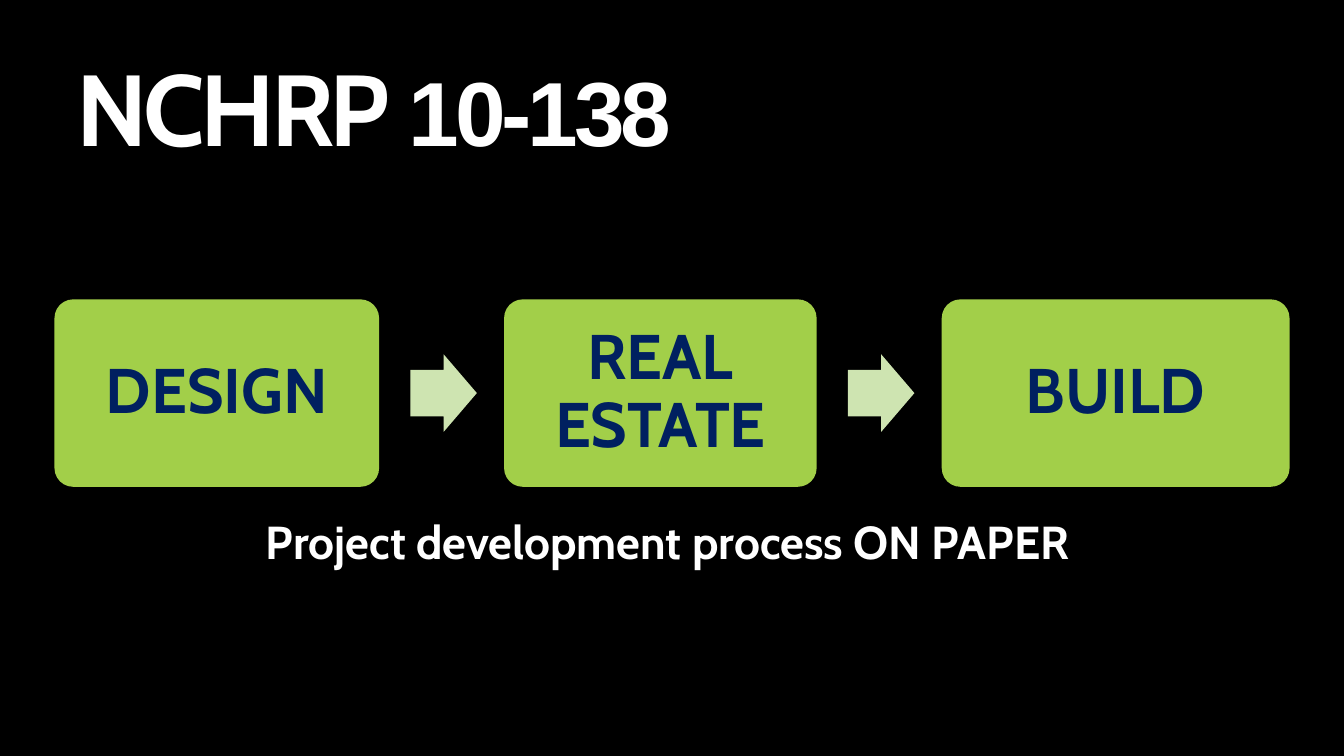
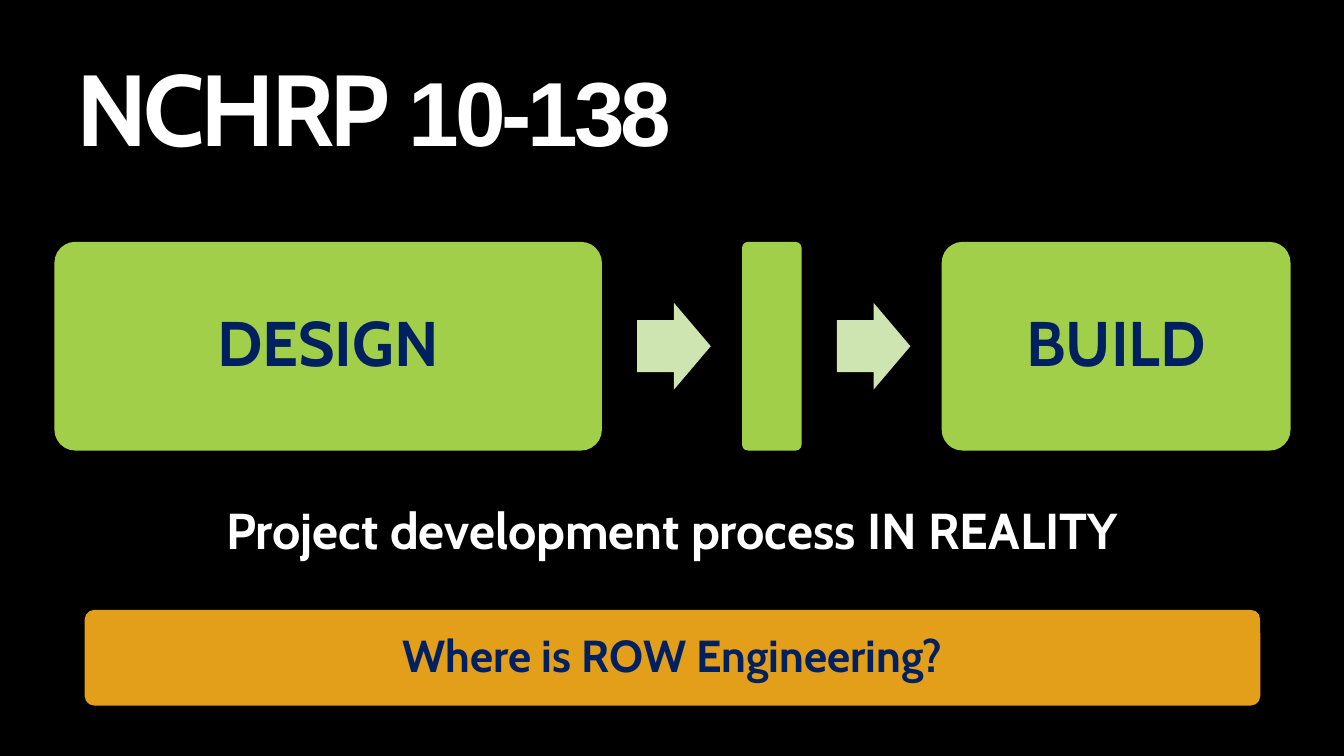
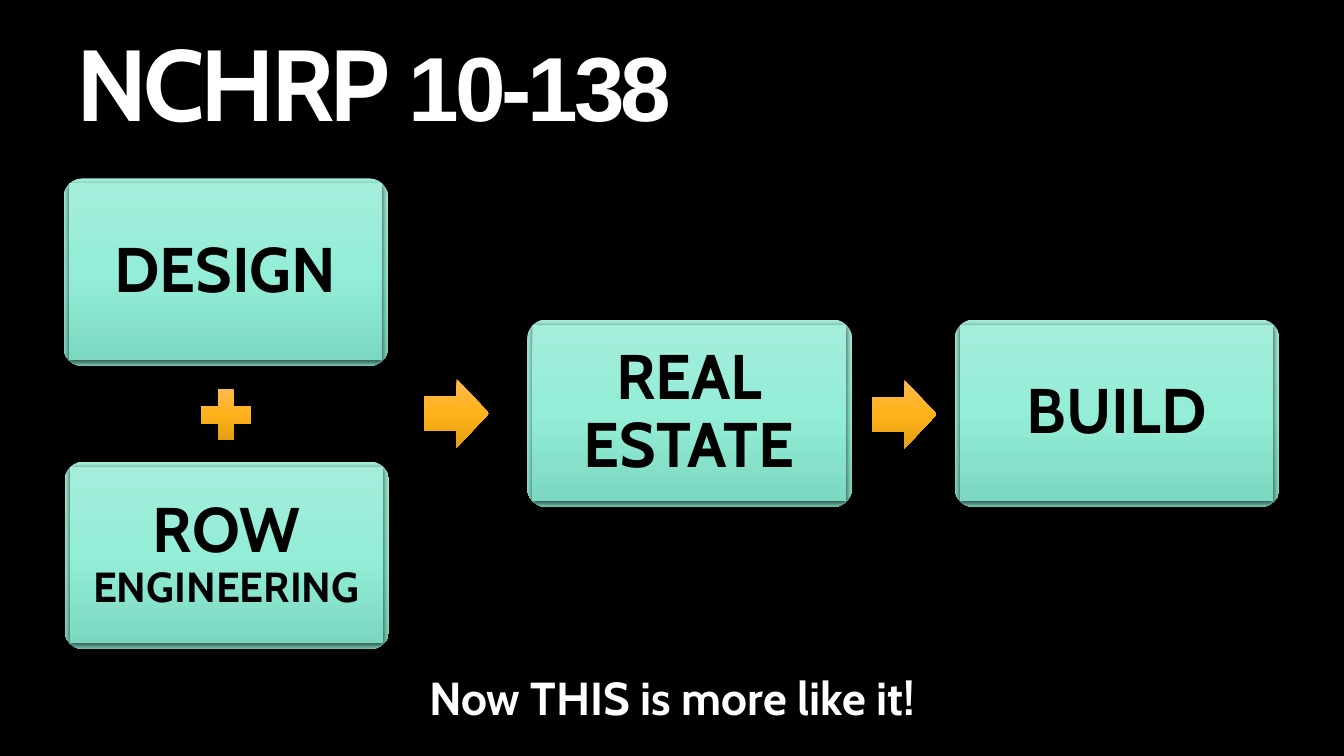
"""Three slides on the NCHRP 10-138 project development process."""
from pptx import Presentation
from pptx.dml.color import RGBColor
from pptx.enum.shapes import MSO_SHAPE
from pptx.enum.text import MSO_ANCHOR, PP_ALIGN
from pptx.oxml import parse_xml
from pptx.oxml.ns import nsdecls
from pptx.util import Inches, Pt

ROUNDED, RECT = MSO_SHAPE.ROUNDED_RECTANGLE, MSO_SHAPE.RECTANGLE
ARROW, PLUS = MSO_SHAPE.RIGHT_ARROW, MSO_SHAPE.CROSS
LEFT, CENTER = PP_ALIGN.LEFT, PP_ALIGN.CENTER
TOP, MIDDLE = MSO_ANCHOR.TOP, MSO_ANCHOR.MIDDLE

COLORS = {
    "black": "000000", "white": "FFFFFF", "navy": "002060",
    "green": "A2CF49", "pale_green": "CEE4B1", "amber": "FCB11C",
}
MINT = {"stops": ("A4EDDB", "93EDD7", "7DD8C2"), "alpha": 63, "blur": 4.5, "dist": 1.5}
ORANGE = {"stops": ("FFBA4F", "FFB219", "E59F14"), "alpha": 32, "blur": 3.5, "dist": 2.2}


def write(shape, runs, color, align=CENTER, inset=None, anchor=MIDDLE):
    """Fill the shape with one paragraph of (text, size, font) runs."""
    frame = shape.text_frame
    frame.word_wrap = True
    frame.vertical_anchor = anchor
    if inset is not None:
        frame.margin_left = frame.margin_right = Inches(inset)
        frame.margin_top = frame.margin_bottom = Inches(inset)
    paragraph = frame.paragraphs[0]
    paragraph.alignment = align
    paragraph.line_spacing = 0.9
    paragraph.font.bold = True
    paragraph.font.color.rgb = RGBColor.from_string(COLORS[color])
    for text, size, font in runs:
        run = paragraph.add_run()
        run.text = text
        run.font.size = Pt(size)
        run.font.name = font
    return paragraph


def add_block(slide, kind, box, fill, adjustments=()):
    """Draw a borderless shape with a flat colour or a shaded gradient."""
    block = slide.shapes.add_shape(kind, *map(Inches, box))
    for index, value in enumerate(adjustments):
        block.adjustments[index] = value
    if isinstance(fill, str):
        block.fill.solid()
        block.fill.fore_color.rgb = RGBColor.from_string(COLORS[fill])
        block.line.fill.background()
        block.shadow.inherit = False
        return block
    stops = "".join(
        f'<a:gs pos="{index * 50000}"><a:srgbClr val="{color}"/></a:gs>'
        for index, color in enumerate(fill["stops"]))
    properties = block._element.spPr
    properties.append(parse_xml(
        f'<a:gradFill {nsdecls("a")}><a:gsLst>{stops}</a:gsLst>'
        '<a:lin ang="5400000" scaled="0"/></a:gradFill>'))
    block.line.fill.background()
    properties.append(parse_xml(
        f'<a:effectLst {nsdecls("a")}><a:outerShdw blurRad="{Pt(fill["blur"])}" '
        f'dist="{Pt(fill["dist"])}" dir="5400000" algn="ctr" rotWithShape="0">'
        f'<a:srgbClr val="000000"><a:alpha val="{fill["alpha"] * 1000}"/></a:srgbClr>'
        '</a:outerShdw></a:effectLst>'))
    return block


deck = Presentation()
deck.slide_width, deck.slide_height = Inches(13.33), Inches(7.5)

captions = [
    (0.54, "Project development process ON PAPER", 33, LEFT, (2.54, 4.93, 8.26, 0.95)),
    (0.54, "Project development process IN REALITY", 36, CENTER, (2.09, 4.81, 9.15, 0.95)),
    (0.29, "Now THIS is more like it!", 33, CENTER, (4.01, 6.47, 5.31, 0.95)),
]
slides = []
for title_top, caption, size, align, box in captions:
    slide = deck.slides.add_slide(deck.slide_layouts[6])
    slide.background.fill.solid()
    slide.background.fill.fore_color.rgb = RGBColor.from_string(COLORS["black"])
    title = slide.shapes.add_textbox(*map(Inches, (0.66, title_top, 11.75, 1.32)))
    heading = write(title, [("NCHRP ", 72, "Cabin"), ("10-138", 65, "Arial")],
                    "white", LEFT, anchor=TOP)
    for run in heading.runs:
        run.font._element.set("spc", "-300")
    write(slide.shapes.add_textbox(*map(Inches, box)),
          [(caption, size, "Cabin")], "white", align)
    slides.append(slide)
on_paper, in_reality, improved = slides

flows = [
    (on_paper, 2.97, 1.86, 0.31, (0.66, 0.77), 1.24,
     [("DESIGN", 3.22), ("REAL ESTATE", 3.1), ("BUILD", 3.45)]),
    (in_reality, 2.4, 2.07, 0.35, (0.73, 0.86), 1.39,
     [("DESIGN", 5.43), ("", 0.59), ("BUILD", 3.46)]),
]
for slide, top, height, arrow_gap, (arrow_width, arrow_height), step, stages in flows:
    left = 0.54
    for index, (stage, width) in enumerate(stages):
        if index:
            add_block(slide, ARROW,
                      (left - step + arrow_gap, top + (height - arrow_height) / 2,
                       arrow_width, arrow_height), "pale_green", (0.6, 0.5))
        block = add_block(slide, ROUNDED, (left, top, width, height), "green", (0.1,))
        if stage:
            write(block, [(stage, 45, "Cabin")], "navy", inset=0.19)
        left += width + step

question = add_block(in_reality, ROUNDED, (0.84, 6.05, 11.66, 0.95), "amber", (0.1,))
amber_fill = question._element.spPr.xpath("./a:solidFill/a:srgbClr")[0]
amber_fill.append(parse_xml(f'<a:alpha {nsdecls("a")} val="90000"/>'))
write(question, [("Where is ROW Engineering?", 32, "Cabin")], "navy", inset=0.13)

improved_stages = [
    (0.63, 1.77, [("DESIGN", 45, "Cabin")]),
    (0.64, 4.58, [("ROW", 45, "Cabin"), (" ENGINEERING", 30, "Cabin")]),
    (5.23, 3.17, [("REAL ESTATE", 45, "Cabin")]),
    (9.47, 3.17, [("BUILD", 45, "Cabin")]),
]
for left, top, label in improved_stages:
    add_block(improved, ROUNDED, (left, top, 3.22, 1.86), MINT, (0.1,))
    panel = add_block(improved, RECT, (left + 0.05, top + 0.05, 3.11, 1.75), MINT)
    write(panel, label, "black", inset=0.19)

for kind, box, adjustments in [
    (ARROW, (4.21, 3.76, 0.64, 0.68), ()),
    (PLUS, (1.99, 3.86, 0.5, 0.51), (0.345,)),
    (ARROW, (8.65, 3.77, 0.64, 0.68), ()),
]:
    add_block(improved, kind, box, ORANGE, adjustments)

deck.save("out.pptx")
